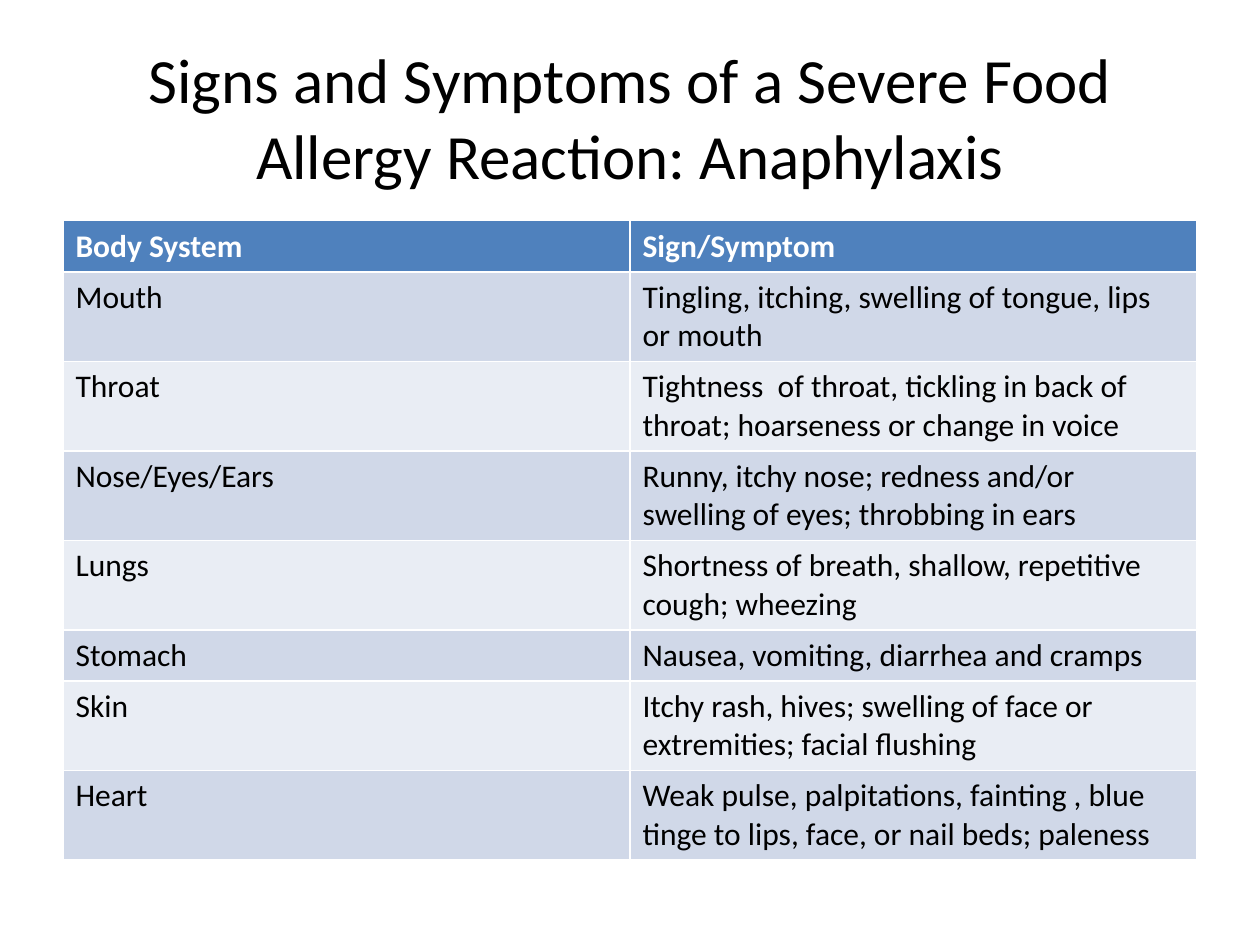
from pptx import Presentation
from pptx.dml.color import RGBColor
from pptx.enum.text import MSO_ANCHOR as ANCHOR, PP_ALIGN as ALIGN
from pptx.util import Cm, Pt

TITLE = "Signs and Symptoms of a Severe Food Allergy Reaction: Anaphylaxis"
ROWS = [
    ("Body System", "Sign/Symptom"),
    ("Mouth", "Tingling, itching, swelling of tongue, lips or mouth"),
    ("Throat", "Tightness  of throat, tickling in back of throat; hoarseness or change in voice"),
    ("Nose/Eyes/Ears", "Runny, itchy nose; redness and/or swelling of eyes; throbbing in ears"),
    ("Lungs", "Shortness of breath, shallow, repetitive cough; wheezing"),
    ("Stomach", "Nausea, vomiting, diarrhea and cramps"),
    ("Skin", "Itchy rash, hives; swelling of face or extremities; facial flushing"),
    ("Heart", "Weak pulse, palpitations, fainting , blue tinge to lips, face, or nail beds; paleness"),
]

BLACK = RGBColor(0x00, 0x00, 0x00)
WHITE = RGBColor(0xFF, 0xFF, 0xFF)
HEADER = RGBColor(0x4F, 0x81, 0xBD)
BANDS = [RGBColor(0xE9, 0xED, 0xF4), RGBColor(0xD0, 0xD8, 0xE8)]

LEFT, WIDTH = Cm(1.27), Cm(22.86)
ROW_HEIGHT = Cm(1.03)


def set_text(tf, text, size=18, color=BLACK, bold=False, align=ALIGN.LEFT):
    p = tf.paragraphs[0]
    p.alignment = align
    r = p.add_run()
    r.text = text
    r.font.name = "Calibri"
    r.font.size = Pt(size)
    r.font.bold = bold
    r.font.color.rgb = color


prs = Presentation()
prs.slide_width, prs.slide_height = Cm(25.4), Cm(19.05)
s = prs.slides.add_slide(prs.slide_layouts[5])

title = s.shapes.title
title.left, title.top, title.width, title.height = LEFT, Cm(0.76), WIDTH, Cm(3.18)
title.text_frame.vertical_anchor = ANCHOR.MIDDLE
set_text(title.text_frame, TITLE, size=36, align=ALIGN.CENTER)

table = s.shapes.add_table(len(ROWS), len(ROWS[0]), LEFT, Cm(4.45),
                           WIDTH, ROW_HEIGHT * len(ROWS)).table
for i, row in enumerate(ROWS):
    header = i == 0
    for j, text in enumerate(row):
        cell = table.cell(i, j)
        cell.fill.solid()
        cell.fill.fore_color.rgb = HEADER if header else BANDS[i % 2]
        set_text(cell.text_frame, text, color=WHITE if header else BLACK, bold=header)

prs.save("out.pptx")
